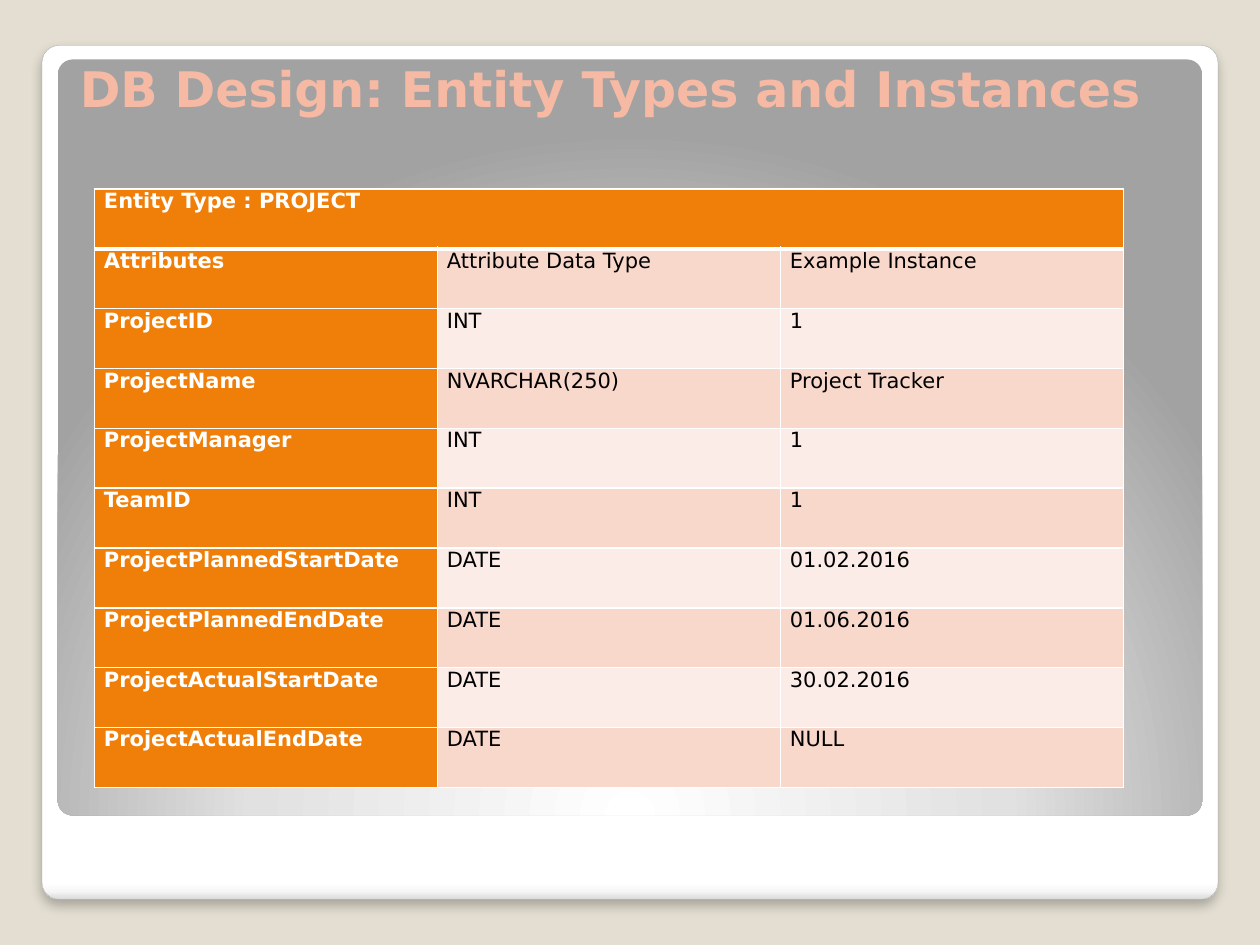
from dataclasses import dataclass

from lxml import etree
from pptx import Presentation
from pptx.dml.color import RGBColor
from pptx.enum import text
from pptx.enum.shapes import MSO_SHAPE
from pptx.oxml import ns
from pptx.util import Pt

ATTRIBUTES = [
    ("Attributes", "Attribute Data Type", "Example Instance"),
    ("ProjectID", "INT", "1"),
    ("ProjectName", "NVARCHAR(250)", "Project Tracker"),
    ("ProjectManager", "INT", "1"),
    ("TeamID", "INT", "1"),
    ("ProjectPlannedStartDate", "DATE", "01.02.2016"),
    ("ProjectPlannedEndDate", "DATE", "01.06.2016"),
    ("ProjectActualStartDate", "DATE", "30.02.2016"),
    ("ProjectActualEndDate", "DATE", "NULL"),
]


@dataclass(frozen=True)
class Theme:
    font: str = "DejaVu Sans"
    title_size: int = 28
    cell_size: int = 12
    background: str = "E3DED1"
    title: str = "F6B9A3"
    accent: str = "F07F09"
    bands: tuple = ("F9D8CC", "FCECE7")
    light: str = "FFFFFF"
    dark: str = "000000"
    outline: str = "A4A4A4"
    frame_stops: tuple = ((0, "FFFFFF"), (98, "FFFFFF"), (99, "F7F7F7"), (100, "DADADA"))
    panel_stops: tuple = ((0, "FFFFFF"), (55, "E1E1E1"), (100, "A2A2A2"))


def add_node(parent, tag, **attributes):
    values = {name: str(value) for name, value in attributes.items()}
    return etree.SubElement(parent, ns.qn(tag), values)


def write_text(frame, content, *, font, size, color, bold=False, before=0, after=0, indent=0):
    paragraph = frame.paragraphs[0]
    paragraph.alignment = text.PP_ALIGN.LEFT
    paragraph.space_before, paragraph.space_after = Pt(before), Pt(after)
    properties = paragraph._p.get_or_add_pPr()
    properties.set("marL", str(Pt(indent)))
    properties.set("indent", "0")
    run = paragraph.add_run()
    run.text = content
    run.font.name, run.font.size, run.font.bold = font, Pt(size), bold
    run.font.color.rgb = RGBColor.from_string(color)


class SlideBuilder:
    """Draws styled elements on the current slide."""

    def __init__(self, slide, theme):
        self.slide, self.theme = slide, theme

    def background(self):
        fill = self.slide.background.fill
        fill.solid()
        fill.fore_color.rgb = RGBColor.from_string(self.theme.background)

    def panel(self, left, top, width, height, stops, radial=False):
        shape = self.slide.shapes.add_shape(
            MSO_SHAPE.ROUNDED_RECTANGLE, Pt(left), Pt(top), Pt(width), Pt(height))
        shape.adjustments[0] = 0.02
        shape.shadow.inherit = False
        shape.line.fill.background()
        shape.fill.gradient()
        gradient = shape._element.spPr.find(ns.qn("a:gradFill"))
        for child in list(gradient):
            gradient.remove(child)
        stop_list = add_node(gradient, "a:gsLst")
        for position, color in stops:
            stop = add_node(stop_list, "a:gs", pos=position * 1000)
            add_node(stop, "a:srgbClr", val=color)
        if radial:
            circle = add_node(gradient, "a:path", path="circle")
            add_node(circle, "a:fillToRect", l=50000, t=175000, r=50000, b=-75000)
        else:
            add_node(gradient, "a:lin", ang=5400000, scaled=0)
        return shape

    def frame(self, *box):
        shape = self.panel(*box, self.theme.frame_stops)
        shape.line.color.rgb = RGBColor.from_string(self.theme.outline)
        shape.line.width = Pt(0.16)
        effects = shape._element.spPr.find(ns.qn("a:effectLst"))
        shadow = add_node(effects, "a:outerShdw", blurRad=Pt(6), dist=Pt(4), dir=5400000,
                          algn="t", rotWithShape=0)
        color = add_node(shadow, "a:srgbClr", val=self.theme.dark)
        add_node(color, "a:alpha", val=25000)

    def title(self, content, left, top, width, height):
        title = self.slide.shapes.title
        title.left, title.top, title.width, title.height = map(Pt, (left, top, width, height))
        frame = title.text_frame
        frame.word_wrap = True
        frame.auto_size = text.MSO_AUTO_SIZE.NONE
        frame.vertical_anchor = text.MSO_ANCHOR.TOP
        write_text(frame, content, font=self.theme.font, size=self.theme.title_size,
                   color=self.theme.title, bold=True, indent=14.4)
        self.slide.shapes._spTree.append(title._element)

    def cell(self, cell, content, fill, color, bold=False, bottom=1, top=1):
        properties = cell._tc.get_or_add_tcPr()
        for side, width in (("L", 1), ("R", 1), ("T", top), ("B", bottom)):
            border = add_node(properties, f"a:ln{side}", w=Pt(width))
            add_node(add_node(border, "a:solidFill"), "a:srgbClr", val=self.theme.light)
        cell.fill.solid()
        cell.fill.fore_color.rgb = RGBColor.from_string(fill)
        cell.margin_left = cell.margin_right = Pt(5.4)
        cell.margin_top = cell.margin_bottom = 0
        if content:
            write_text(cell.text_frame, content, font=self.theme.font,
                       size=self.theme.cell_size, color=color, bold=bold, before=6, after=6)

    def table(self, heading, rows, left, top, width, height):
        theme, columns = self.theme, len(rows[0])
        table = self.slide.shapes.add_table(
            len(rows) + 1, columns, Pt(left), Pt(top), Pt(width), Pt(height)).table
        table.first_row = table.horz_banding = False
        for row in table.rows:
            row.height = Pt(height / (len(rows) + 1))
        table.cell(0, 0).merge(table.cell(0, columns - 1))
        for column in range(columns):
            self.cell(table.cell(0, column), "" if column else heading,
                      theme.accent, theme.light, bold=True, bottom=3)
        for index, row in enumerate(rows):
            for column, content in enumerate(row):
                key = column == 0
                self.cell(table.cell(index + 1, column), content,
                          theme.accent if key else theme.bands[index % 2],
                          theme.light if key else theme.dark,
                          bold=key, top=1 if index else 3)


def main():
    presentation = Presentation()
    presentation.slide_width, presentation.slide_height = Pt(720), Pt(540)
    slide = presentation.slides.add_slide(presentation.slide_layouts[5])
    builder = SlideBuilder(slide, Theme())
    builder.background()
    builder.frame(24, 26, 672, 488)
    builder.panel(33, 34, 654, 432, builder.theme.panel_stops, radial=True)
    builder.title("DB Design: Entity Types and Instances", 24, 30, 684, 72)
    builder.table("Entity Type : PROJECT", ATTRIBUTES, 54, 108, 588, 342)
    presentation.save("out.pptx")


if __name__ == "__main__":
    main()
